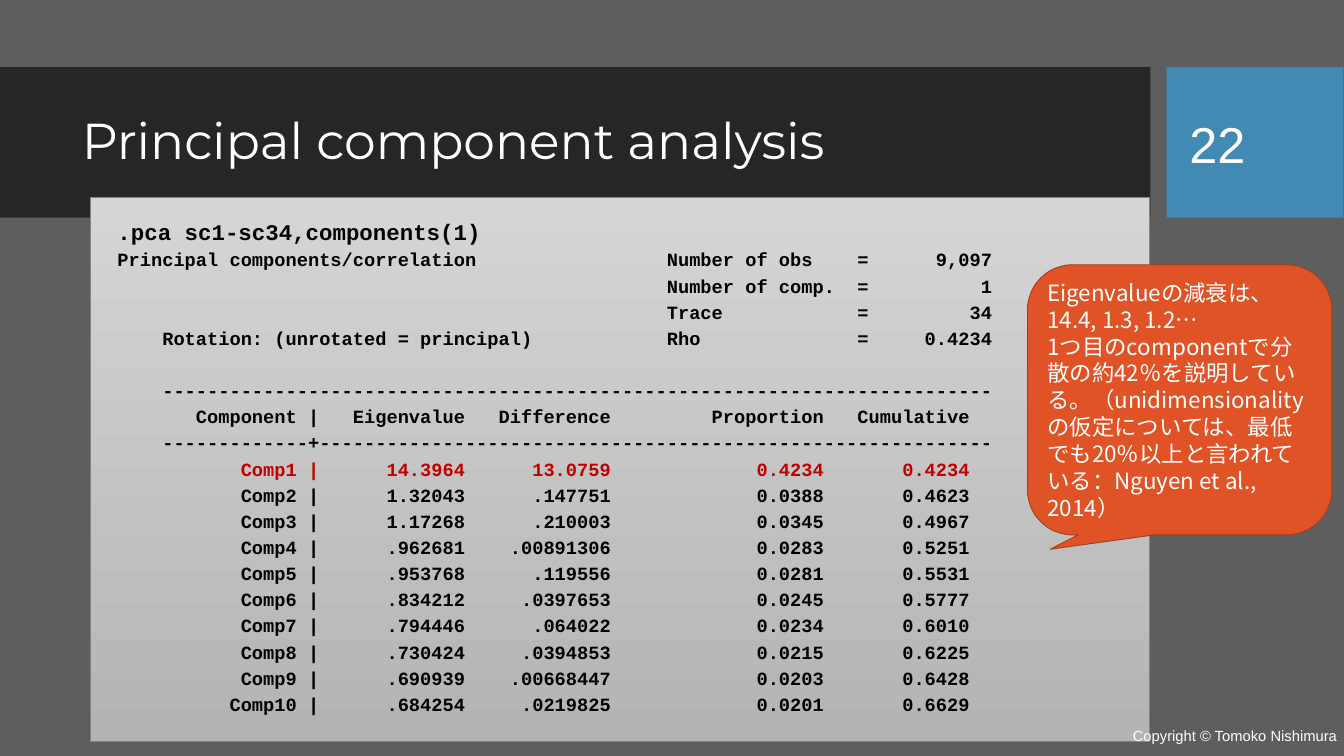
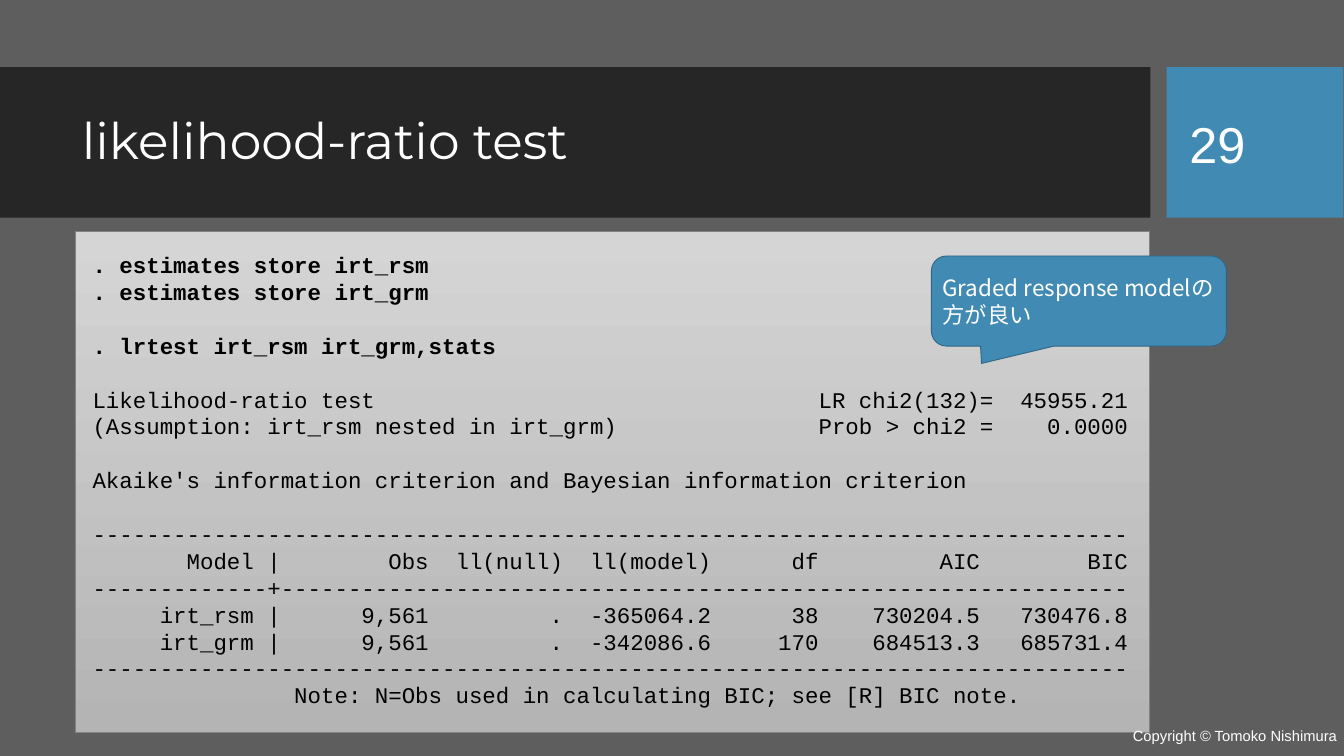
from dataclasses import dataclass
from pptx import Presentation
from pptx.dml.color import RGBColor
from pptx.enum.shapes import MSO_SHAPE
from pptx.enum.text import MSO_ANCHOR, PP_ALIGN
from pptx.oxml.ns import qn
from pptx.util import Pt
from lxml.etree import SubElement


@dataclass(frozen=True)
class Theme:
    back: str = "5E5E5E"
    band: str = "262626"
    blue: str = "418AB3"
    navy: str = "306684"
    rust: str = "DF5327"
    brown: str = "A53D1D"
    white: str = "FFFFFF"
    black: str = "000000"
    red: str = "C00000"
    light: str = "D5D5D5"
    dark: str = "B4B4B4"
    edge: str = "838383"
    title: float = 54
    body: float = 24
    small: float = 20
    foot: float = 15.8
    head: str = "Montserrat"
    sans: str = "Arial"
    mono: str = "Courier New"
    cjk: str = "Noto Sans CJK JP"


T = Theme()
LEADING = 1.2  # line height of the code font, as a share of its size

SUMMARY = """\
.pca sc1-sc34,components(1)
Principal components/correlation                 Number of obs    =      9,097
                                                 Number of comp.  =          1
                                                 Trace            =         34
    Rotation: (unrotated = principal)            Rho              =     0.4234

    --------------------------------------------------------------------------
       Component |   Eigenvalue   Difference         Proportion   Cumulative
    -------------+------------------------------------------------------------"""

# eigenvalue, difference, proportion, cumulative
COMPS = [
    ("14.3964", "13.0759", "0.4234", "0.4234"),
    ("1.32043", ".147751", "0.0388", "0.4623"),
    ("1.17268", ".210003", "0.0345", "0.4967"),
    (".962681", ".00891306", "0.0283", "0.5251"),
    (".953768", ".119556", "0.0281", "0.5531"),
    (".834212", ".0397653", "0.0245", "0.5777"),
    (".794446", ".064022", "0.0234", "0.6010"),
    (".730424", ".0394853", "0.0215", "0.6225"),
    (".690939", ".00668447", "0.0203", "0.6428"),
    (".684254", ".0219825", "0.0201", "0.6629"),
]

COMMANDS = """\
. estimates store irt_rsm
. estimates store irt_grm

. lrtest irt_rsm irt_grm,stats

Likelihood-ratio test                                 LR chi2(132)=  45955.21
(Assumption: irt_rsm nested in irt_grm)               Prob > chi2 =    0.0000
"""

CRITERIA = """\
Akaike's information criterion and Bayesian information criterion

-----------------------------------------------------------------------------
       Model |        Obs  ll(null)  ll(model)      df         AIC        BIC
-------------+---------------------------------------------------------------
     irt_rsm |      9,561         .  -365064.2      38    730204.5   730476.8
     irt_grm |      9,561         .  -342086.6     170    684513.3   685731.4
-----------------------------------------------------------------------------
               Note: N=Obs used in calculating BIC; see [R] BIC note."""

DECAY = (
    "Eigenvalueの減衰は、14.4, 1.3, 1.2…",
    "1つ目のcomponentで分散の約42％を説明している。"
    "（unidimensionalityの仮定については、最低でも20％以上と言われている："
    "Nguyen et al., 2014）",
)


def rgb(code):
    return RGBColor.from_string(code)


def write(para, text, font=T.sans, size=T.body, color=T.white, bold=False,
          before=0, leading=None):
    para.alignment = PP_ALIGN.LEFT
    para.space_before = Pt(before)
    if leading:
        para.line_spacing = leading
    run = para.add_run()
    run.text = text
    run.font.name = font
    run.font.size = Pt(size)
    run.font.bold = bold
    run.font.color.rgb = rgb(color)
    SubElement(run.font._element, qn("a:ea"), typeface=font)


def paras(frame):
    """Yield the first paragraph of a frame, then new ones."""
    yield frame.paragraphs[0]
    while True:
        yield frame.add_paragraph()


def field(slide, box, anchor=MSO_ANCHOR.MIDDLE):
    frame = slide.shapes.add_textbox(*map(Pt, box)).text_frame
    frame.word_wrap = True
    frame.vertical_anchor = anchor
    return frame


def shape(slide, box, fill, line=None, width=1, kind=MSO_SHAPE.RECTANGLE):
    """Add a shape; a pair of colours as fill gives a downward gradient."""
    item = slide.shapes.add_shape(kind, *map(Pt, box))
    item.shadow.inherit = False
    if isinstance(fill, tuple):
        item.fill.gradient()
        item.fill.gradient_angle = 270
        for stop, color in zip(item.fill.gradient_stops, fill):
            stop.color.rgb = rgb(color)
    else:
        item.fill.solid()
        item.fill.fore_color.rgb = rgb(fill)
    if line:
        item.line.color.rgb = rgb(line)
        item.line.width = Pt(width)
    else:
        item.line.fill.background()
    return item


def base(deck, title, number):
    """Add a slide with its background, title band and number."""
    slide = deck.slides.add_slide(deck.slide_layouts[6])
    slide.background.fill.solid()
    slide.background.fill.fore_color.rgb = rgb(T.back)
    shape(slide, (0, 72, 1232.6, 161.3), T.band)
    shape(slide, (1250, 72, 189.4, 161.3), T.blue)
    write(field(slide, (80.6, 89.3, 1135.4, 127.4)).paragraphs[0], title,
          font=T.head, size=T.title, leading=0.9)
    write(field(slide, (1267.2, 89.3, 136, 128.9)).paragraphs[0], number,
          size=T.title)
    return slide


def footer(slide):
    write(field(slide, (1206.7, 766.8, 233.3, 43.2)).paragraphs[0],
          "Copyright © Tomoko Nishimura", size=T.foot)


def listing(slide, box, pad, lines, style, gap=0):
    """Draw a grey panel with code in it; style gives each line's format.

    An empty line becomes space before the line that follows it.
    """
    x, y, w, h = box
    left, top, right = pad
    shape(slide, box, (T.light, T.dark), T.edge, 0.75)
    text = field(slide, (x + left, y + top, w - left - right, h - top),
                 MSO_ANCHOR.TOP)
    slots = paras(text)
    before = 0
    for row, line in enumerate(lines):
        look = {"size": T.body} | style(row, line)
        if line:
            write(next(slots), line, font=T.mono, before=before, **look)
            before = gap
        else:
            before += look["size"] * LEADING + gap


def callout(slide, box, tip, texts, fill, line):
    item = shape(slide, box, fill, line,
                 kind=MSO_SHAPE.ROUNDED_RECTANGULAR_CALLOUT)
    for i, value in enumerate((*tip, 0.167)):
        item.adjustments[i] = value
    frame = item.text_frame
    frame.word_wrap = True
    frame.vertical_anchor = MSO_ANCHOR.MIDDLE
    for text, para in zip(texts, paras(frame)):
        write(para, text, font=T.cjk)


def pca(deck):
    def style(row, line):
        return {"size": T.small if row else T.body, "bold": True,
                "color": T.red if "Comp1 |" in line else T.black}

    rows = [f"{f'Comp{i}':>16} |{eigen:>13}{diff:>13}{part:>19}{total:>13}"
            for i, (eigen, diff, part, total) in enumerate(COMPS, 1)]
    slide = base(deck, "Principal component analysis", "22")
    listing(slide, (97.2, 211.7, 1134, 582.5), (21.6, 18, 37.4),
            SUMMARY.splitlines() + rows, style, gap=4)
    callout(slide, (1100.9, 283.7, 326.2, 289.4), (-0.425, 0.553), DECAY,
            T.rust, T.brown)
    footer(slide)


def ratio(deck):
    def style(row, line):
        return {"bold": line.startswith(". "), "color": T.black}

    slide = base(deck, "likelihood-ratio test", "29")
    listing(slide, (80.6, 248.4, 1150.6, 536.4), (11.5, 17.3, 15),
            [*COMMANDS.splitlines(), "", *CRITERIA.splitlines()], style)
    callout(slide, (997.9, 274.3, 316.1, 96.5), (-0.33, 0.693),
            ("Graded response modelの方が良い",), T.blue, T.navy)
    footer(slide)


def main():
    deck = Presentation()
    deck.slide_width, deck.slide_height = Pt(1440), Pt(810)
    pca(deck)
    ratio(deck)
    deck.save("out.pptx")


if __name__ == "__main__":
    main()
